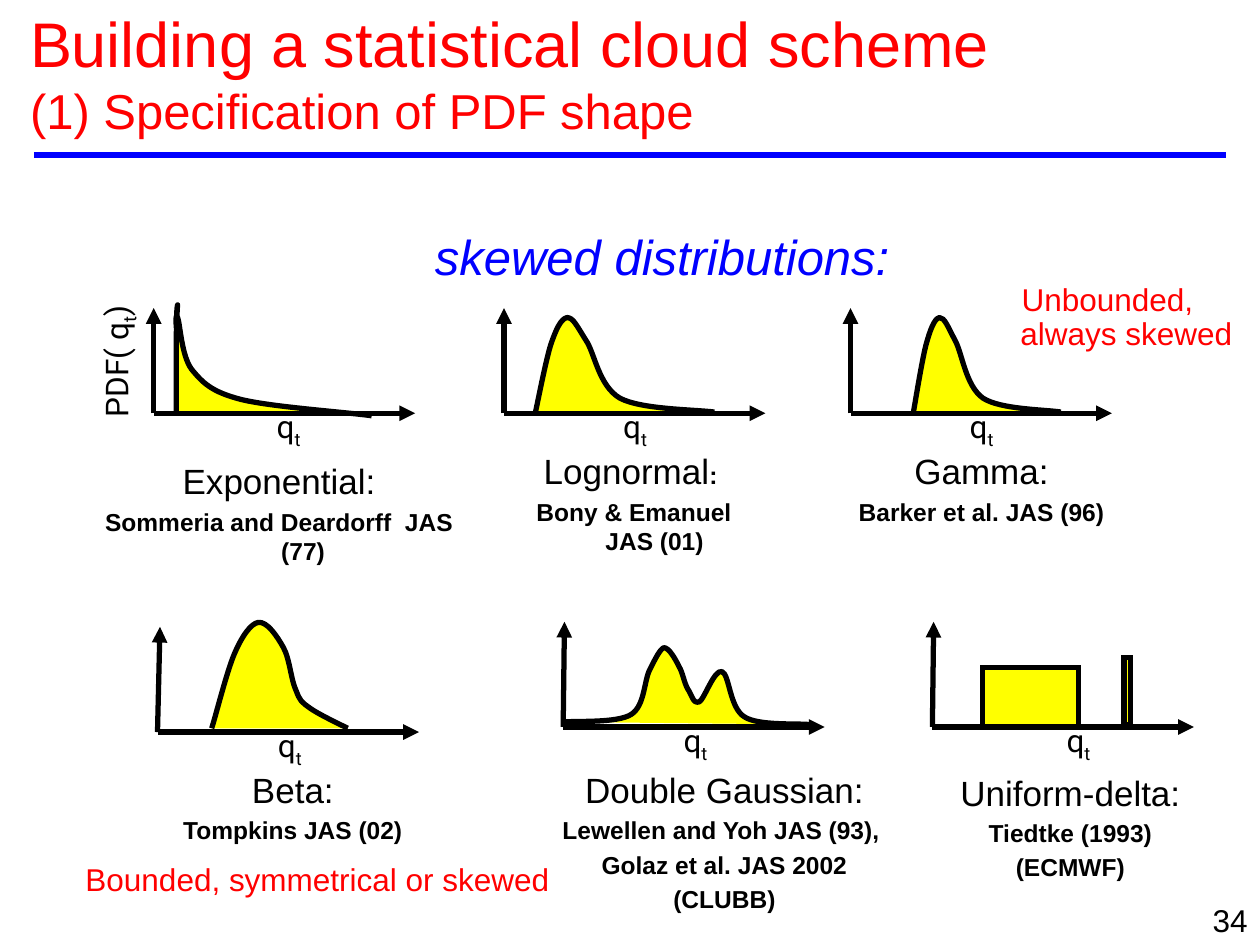
import pptx
import pptx.dml.color
import pptx.enum.shapes
import pptx.enum.text
import pptx.oxml.ns
import pptx.util
from lxml import etree

RED = pptx.dml.color.RGBColor(0xFF, 0x00, 0x00)
BLUE = pptx.dml.color.RGBColor(0x00, 0x00, 0xFF)
BLACK = pptx.dml.color.RGBColor(0x00, 0x00, 0x00)
YELLOW = pptx.dml.color.RGBColor(0xFF, 0xFF, 0x00)

# The slide is a grid of 100 columns and 75 rows of square cells.
CELL = pptx.util.Inches(0.1)
CENTER = pptx.enum.text.PP_ALIGN.CENTER
RIGHT = pptx.enum.text.PP_ALIGN.RIGHT

# Cubic curves: a start point, then two control points and an end point each.
EXPONENTIAL = [
    (14, 33), (14, 30.9), (14, 29), (14, 27.5), (14, 26.1), (14, 24.5), (14.1, 24.2),
    (14.1, 24), (14, 25.9), (14, 26), (14, 26.2), (13.9, 24.6), (14.1, 25.2),
    (14.3, 25.7), (14.4, 28.2), (15.2, 29.3), (16.1, 30.4), (16.8, 31.1), (19.1, 31.7),
    (21.5, 32.3), (27.3, 32.7), (29.5, 33)]
LOGNORMAL = [
    (42.5, 32.7), (42.7, 31.8), (43.3, 28.7), (43.7, 27.4), (44.1, 26.2), (44.5, 25.3),
    (45, 25.2), (45.5, 25.2), (45.8, 25.9), (46.5, 27), (47.2, 28), (47.5, 30.6),
    (49.2, 31.6), (50.9, 32.5), (55.1, 32.5), (56.7, 32.7)]
# Gamma is the lognormal curve, narrowed.
GAMMA = [(72.5 + (x - 42.5) * 11.7 / 14.2, y) for x, y in LOGNORMAL]
BETA = [
    (16.8, 57.8), (17.1, 56.9), (18, 53.3), (18.6, 51.9), (19.2, 50.5), (19.9, 49.5),
    (20.5, 49.4), (21.2, 49.3), (22, 50.5), (22.5, 51.4), (23, 52.3), (23.1, 54),
    (23.5, 54.8), (23.8, 55.6), (23.9, 55.7), (24.6, 56.2), (25.3, 56.7), (27, 57.5),
    (27.6, 57.8)]
DOUBLE_GAUSSIAN = [
    (44.8, 57.3), (45.7, 57.2), (49, 57.4), (50.1, 56.7), (51.2, 56), (51.1, 54),
    (51.6, 53.1), (52, 52.3), (52.4, 51.5), (52.7, 51.4), (53.1, 51.4), (53.6, 52.3),
    (53.9, 52.9), (54.2, 53.4), (54.3, 54.2), (54.6, 54.7), (54.9, 55.1), (55, 55.9),
    (55.5, 55.7), (55.9, 55.5), (56.7, 53.1), (57.3, 53.3), (57.9, 53.5), (57.9, 56.2),
    (59.1, 56.9), (60.2, 57.6), (63.2, 57.4), (64.2, 57.5)]

# Curve, axis origin, lean of the upright axis, q label (left, width, text),
# caption box (left, top, width, height), name, references.
PANELS = [
    (EXPONENTIAL, (12.2, 32.8), 0, (14, 17.2, " q"),
     (6.7, 36, 30.9, 8.3), "Exponential:", ["Sommeria and Deardorff  JAS (77)"]),
    (LOGNORMAL, (40, 32.8), 0, (41.8, 17.2, "q"),
     (39.2, 35.2, 21.7, 8.3), "Lognormal:", [" Bony & Emanuel JAS (01)"]),
    (GAMMA, (67.5, 32.8), 0, (69.3, 17.2, "q"),
     (65, 35.2, 25.8, 8.3), "Gamma:", ["Barker et al. JAS (96)"]),
    (BETA, (12.5, 58.1), 0.2, (14.4, 17.2, "q"),
     (11.6, 60.5, 23.3, 8.3), "Beta:", ["Tompkins JAS (02)"]),
    (DOUBLE_GAUSSIAN, (44.7, 57.7), 0.1, (46.6, 17.2, "q"),
     (35.1, 60.5, 44.8, 8.3), "Double Gaussian:",
     ["Lewellen and Yoh JAS (93), ", "Golaz et al. JAS 2002", "(CLUBB)"]),
    (None, (74, 57.7), 0.1, (76.1, 19, "q"),
     (72, 60.7, 25.9, 9.3), "Uniform-delta:", ["Tiedtke (1993)", "(ECMWF)"]),
]


def cells(*lengths):
    return [round(length * CELL) for length in lengths]


def style_outline(shape):
    shape.shadow.inherit = False
    shape.fill.solid()
    shape.fill.fore_color.rgb = YELLOW
    shape.line.color.rgb = BLACK
    shape.line.width = pptx.util.Pt(3)


def add_curve(page, points):
    """Join all points, then turn each three segments into one cubic curve."""
    builder = page.shapes.build_freeform(*cells(*points[0]))
    builder.add_line_segments([cells(*point) for point in points[1:]], close=False)
    shape = builder.convert_to_shape()
    segments = list(shape._element.iter(pptx.oxml.ns.qn("a:lnTo")))
    for first, second, third in zip(segments[::3], segments[1::3], segments[2::3]):
        cubic = etree.Element(pptx.oxml.ns.qn("a:cubicBezTo"))
        first.addprevious(cubic)
        for segment in (first, second, third):
            cubic.append(segment[0])
            segment.getparent().remove(segment)
    style_outline(shape)


def add_bar(page, *frame):
    bar = page.shapes.add_shape(pptx.enum.shapes.MSO_SHAPE.RECTANGLE, *cells(*frame))
    style_outline(bar)
    etree.SubElement(bar.line._get_or_add_ln(), pptx.oxml.ns.qn("a:miter"), lim="800000")


def add_line(page, start, end, color=BLACK, arrow=True):
    line = page.shapes.add_connector(
        pptx.enum.shapes.MSO_CONNECTOR.STRAIGHT, *cells(*start, *end))
    line.line.color.rgb = color
    line.line.width = pptx.util.Pt(3)
    if arrow:
        etree.SubElement(line.line._get_or_add_ln(),
                         pptx.oxml.ns.qn("a:tailEnd"), type="triangle")
    etree.SubElement(line._element.spPr, pptx.oxml.ns.qn("a:effectLst"))


def add_box(page, *frame, middle=False, wrap=True):
    box = page.shapes.add_textbox(*cells(*frame))
    box.text_frame.word_wrap = wrap
    if middle:
        box.text_frame.vertical_anchor = pptx.enum.text.MSO_ANCHOR.MIDDLE
    return box


def add_para(box, text, size, color=BLACK, align=None, font="Arial", before=0):
    frame = box.text_frame
    para = frame.add_paragraph() if frame.paragraphs[0].runs else frame.paragraphs[0]
    para.add_run().text = text
    para.alignment = align
    if before:
        para.space_before = pptx.util.Pt(before)
    para.font.size = pptx.util.Pt(size)
    para.font.name = font
    para.font.color.rgb = color
    return para


def add_span(para, text, size=None, bold=None, subscript=False):
    span = para.add_run()
    span.text = text
    if size:
        span.font.size = pptx.util.Pt(size)
    span.font.bold = bold
    if subscript:
        span._r.get_or_add_rPr().set("baseline", "-25000")


def indent(para, left, first):
    """Set the left margin and the first line's offset from it, in inches."""
    properties = para._p.get_or_add_pPr()
    properties.set("marL", str(pptx.util.Inches(left)))
    properties.set("indent", str(pptx.util.Inches(first)))


def add_axes(page, x, y, lean, label):
    left, width, text = label
    add_line(page, (x, y), (x + lean, y - 8.35))
    add_line(page, (x, y), (x + 20.75, y))
    box = add_box(page, left, y - 0.8, width, 4, middle=True)
    para = add_para(box, text, 18, align=CENTER, font="Roboto")
    add_span(para, "t", subscript=True)


def add_caption(page, frame, name, references):
    box = add_box(page, *frame)
    heading = add_para(box, name, 20, align=CENTER)
    indent(heading, 0.38, -0.38)
    if name == "Lognormal:":
        heading.runs[0].text = name[:-1]
        add_span(heading, ":", 14, True)
    for reference in references:
        para = add_para(box, reference, 14, align=CENTER, before=2.8)
        para.font.bold = True
        indent(para, 0.38, -0.38)


def main():
    deck = pptx.Presentation()
    deck.slide_width, deck.slide_height = cells(100, 75)
    page = deck.slides.add_slide(deck.slide_layouts[6])

    add_line(page, (2.7, 12.3), (97.3, 12.3), BLUE, arrow=False)
    add_para(add_box(page, 79.2, 71, 20.8, 5), "34", 18, align=RIGHT)
    subtitle = add_para(add_box(page, 16.7, 17.5, 71.7, 5),
                        "skewed distributions:", 28, BLUE, CENTER)
    subtitle.font.italic = True
    indent(subtitle, 0.38, -0.38)

    for curve, origin, lean, label, frame, name, references in PANELS:
        if curve:
            add_curve(page, curve)
        add_axes(page, *origin, lean, label)
        add_caption(page, frame, name, references)
    add_bar(page, 78, 53, 7.6, 4.7)
    add_bar(page, 89.2, 52.2, 0.55, 5.3)

    density = add_box(page, 3.8, 26.7, 11.2, 4, middle=True, wrap=False)
    density.rotation = 270
    para = add_para(density, "PDF( q", 18, align=CENTER, font="Roboto")
    add_span(para, "t", subscript=True)
    add_span(para, ")")

    title = add_para(add_box(page, 1.4, 1.1, 80, 9.2, middle=True),
                     "Building a statistical cloud scheme", 36, RED)
    title.add_line_break()
    add_span(title, "(1) Specification of PDF shape", 28)

    for frame, text in (((5.7, 68.1, 39.9, 5.3), "Bounded, symmetrical or skewed"),
                        ((80, 22.1, 21.4, 5.3), "Unbounded, always skewed")):
        note = add_para(add_box(page, *frame), text, 18, RED)
        note.line_spacing = 0.9
        indent(note, 0, 0.01)

    deck.save("out.pptx")


if __name__ == "__main__":
    main()
